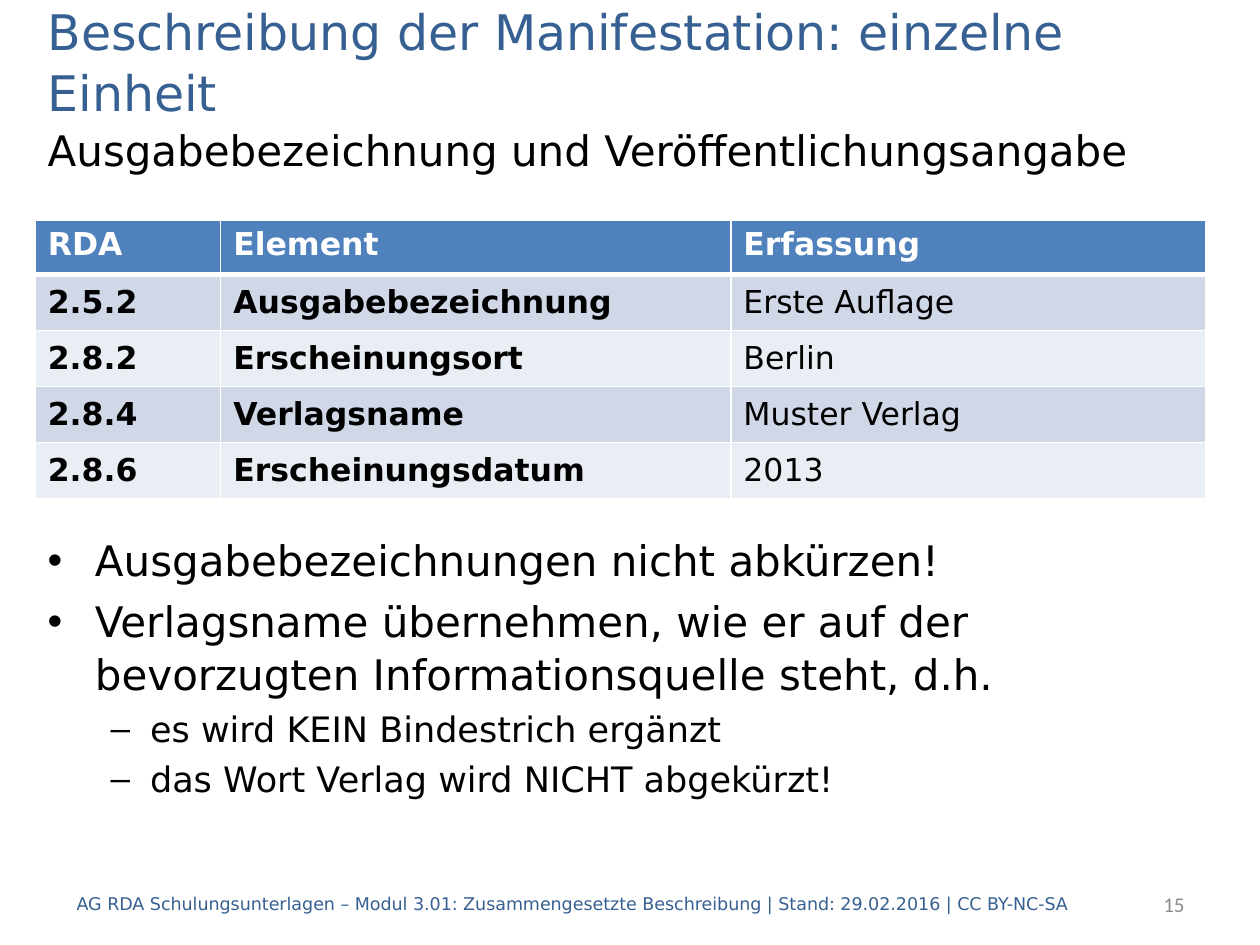
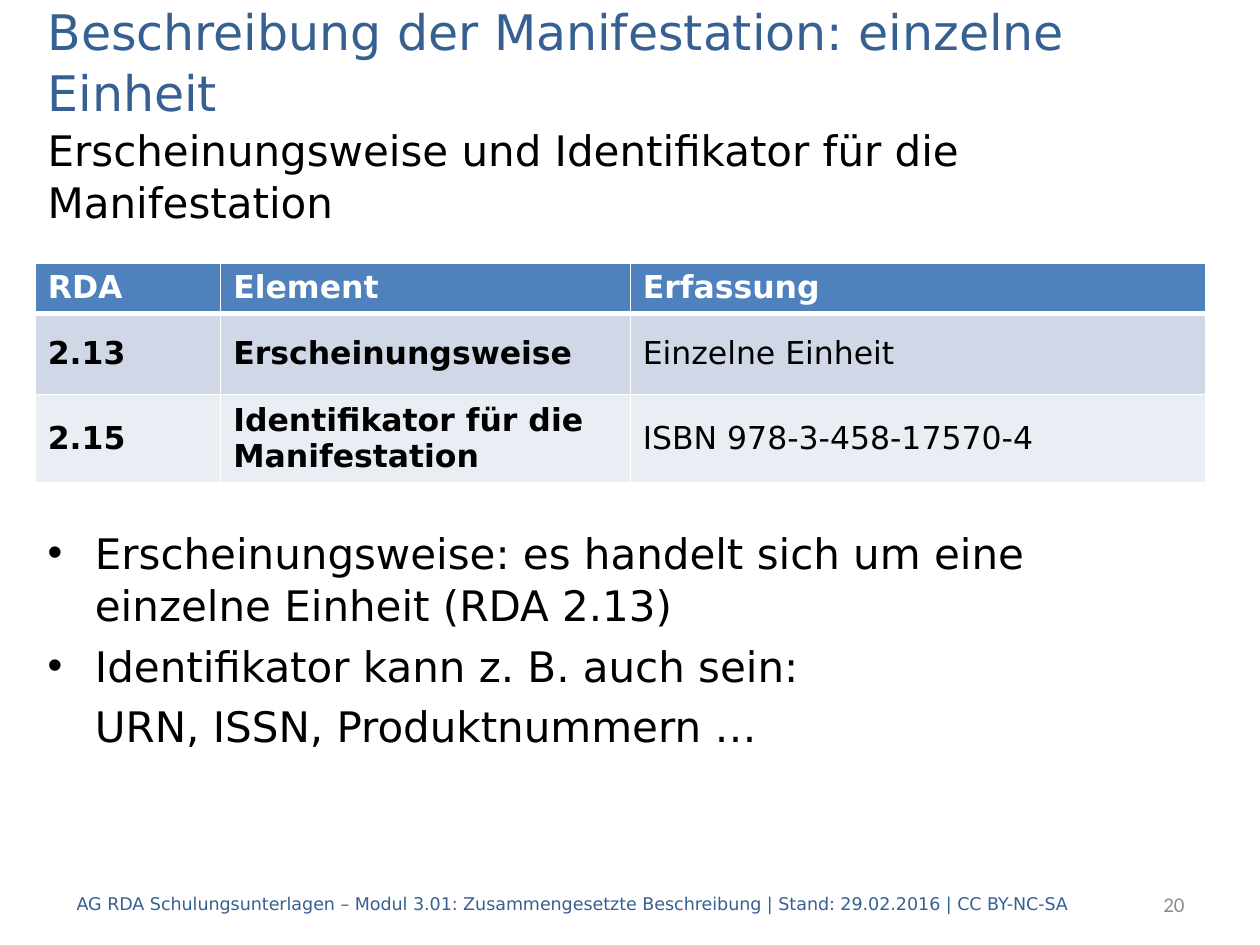
from lxml import etree
from pptx import Presentation
from pptx.dml.color import RGBColor
from pptx.enum.text import MSO_ANCHOR, PP_ALIGN
from pptx.oxml.ns import qn
from pptx.util import Pt

TOP, MIDDLE = MSO_ANCHOR.TOP, MSO_ANCHOR.MIDDLE
LEFT, RIGHT = PP_ALIGN.LEFT, PP_ALIGN.RIGHT

# Shared look
INK = {"blue": "376092", "black": "000000", "grey": "8C8C8C", "white": "FFFFFF",
       "head": "4F81BD", "odd": "D0D8E8", "even": "E9EDF4"}
FONT = "DejaVu Sans"
EDGE, WIDE = 20.16, 680.4
LEAD = 1.04  # line spacing of headings and lists
TITLE = "Beschreibung der Manifestation: einzelne Einheit"
FOOTER = ("AG RDA Schulungsunterlagen – Modul 3.01: Zusammengesetzte Beschreibung"
          " | Stand: 29.02.2016 | CC BY-NC-SA")
HEADS = ("RDA", "Element", "Erfassung")

# List levels: size, left margin, first-line indent, bullet
LEVELS = {"point": (24, 27, -27, "•"), "plain": (24, 27, 0, None),
          "dash": (20, 58.5, -22.5, "–")}

SLIDES = [
    {"number": "15",
     "lead": "Ausgabebezeichnung und Veröffentlichungsangabe",
     "top": 126, "cols": (106, 291.5, 271.5), "rows": (31, 32, 32, 32, 32),
     "cells": [("2.5.2", "Ausgabebezeichnung", "Erste Auflage"),
               ("2.8.2", "Erscheinungsort", "Berlin"),
               ("2.8.4", "Verlagsname", "Muster Verlag"),
               ("2.8.6", "Erscheinungsdatum", "2013")],
     "list_top": 301,
     "list": [("point", "Ausgabebezeichnungen nicht abkürzen!"),
              ("point", "Verlagsname übernehmen, wie er auf der bevorzugten "
                        "Informationsquelle steht, d.h."),
              ("dash", "es wird KEIN Bindestrich ergänzt"),
              ("dash", "das Wort Verlag wird NICHT abgekürzt!")]},
    {"number": "20",
     "lead": "Erscheinungsweise und Identifikator für die Manifestation",
     "top": 150.5, "cols": (106, 234, 329), "rows": (28, 46, 49),
     "cells": [("2.13", "Erscheinungsweise", "Einzelne Einheit"),
               ("2.15", "Identifikator für die Manifestation",
                "ISBN 978-3-458-17570-4")],
     "list_top": 296.5,
     "list": [("point", "Erscheinungsweise: es handelt sich um eine einzelne "
                        "Einheit (RDA 2.13)"),
              ("point", "Identifikator kann z. B. auch sein:"),
              ("plain", "URN, ISSN, Produktnummern …")]},
]


def add_run(para, text, size, ink, bold=False, font=FONT):
    run = para.add_run()
    run.text = text
    run.font.size = Pt(size)
    run.font.name = font
    run.font.bold = bold
    run.font.color.rgb = RGBColor.from_string(INK[ink])


def add_frame(slide, left, top, width, height, anchor):
    box = slide.shapes.add_textbox(Pt(left), Pt(top), Pt(width), Pt(height))
    frame = box.text_frame
    frame.word_wrap = True
    frame.vertical_anchor = anchor
    return frame


def add_label(slide, area, text, size, ink, anchor=MIDDLE, align=LEFT,
              font=FONT, lead=1.0):
    para = add_frame(slide, *area, anchor).paragraphs[0]
    para.alignment = align
    para.line_spacing = lead
    add_run(para, text, size, ink, font=font)


def add_list(slide, top, items):
    frame = add_frame(slide, EDGE, top, WIDE, 496 - top, TOP)
    for index, (level, text) in enumerate(items):
        para = frame.add_paragraph() if index else frame.paragraphs[0]
        size, margin, indent, mark = LEVELS[level]
        para.line_spacing = LEAD
        para.space_before = Pt(0.2 * size if index else 0)
        props = para._p.get_or_add_pPr()
        props.set("marL", str(Pt(margin)))
        props.set("indent", str(Pt(indent)))
        if mark:
            face = etree.SubElement(props, qn("a:buFont"))
            face.set("typeface", "Arial")
            etree.SubElement(props, qn("a:buChar")).set("char", mark)
        add_run(para, text, size, "black")


def add_border(cell, side, width):
    line = etree.SubElement(cell._tc.get_or_add_tcPr(), qn("a:ln" + side))
    line.set("w", str(Pt(width)))
    fill = etree.SubElement(line, qn("a:solidFill"))
    etree.SubElement(fill, qn("a:srgbClr")).set("val", INK["white"])


def fill_cell(cell, text, row, col):
    head = row == 0
    thick = {"T": 3 if row == 1 else 1, "B": 3 if head else 1}
    for side in "LRTB":
        add_border(cell, side, thick.get(side, 1))
    tone = "head" if head else "odd" if row % 2 else "even"
    cell.fill.solid()
    cell.fill.fore_color.rgb = RGBColor.from_string(INK[tone])
    cell.vertical_anchor = TOP if head else MIDDLE
    add_run(cell.text_frame.paragraphs[0], text, 18,
            "white" if head else "black", bold=head or col < 2)


def add_grid(slide, top, cols, rows, cells):
    grid = slide.shapes.add_table(len(rows), len(cols), Pt(EDGE), Pt(top),
                                  Pt(sum(cols)), Pt(sum(rows))).table
    for col, width in enumerate(cols):
        grid.columns[col].width = Pt(width)
    for row, (height, texts) in enumerate(zip(rows, [HEADS, *cells])):
        grid.rows[row].height = Pt(height)
        for col, text in enumerate(texts):
            fill_cell(grid.cell(row, col), text, row, col)


def add_page(deck, page):
    slide = deck.slides.add_slide(deck.slide_layouts[6])
    # Heading
    add_label(slide, (EDGE, 14.4, WIDE, 40.3), TITLE, 28, "blue", lead=LEAD)
    add_label(slide, (EDGE, 66.24, WIDE, 60), page["lead"], 24, "black",
              anchor=TOP, lead=LEAD)
    # Table and list
    add_grid(slide, page["top"], page["cols"], page["rows"], page["cells"])
    add_list(slide, page["list_top"], page["list"])
    # Footer
    add_label(slide, (569.5, 502, 114.5, 28.8), page["number"], 12, "grey",
              align=RIGHT, font="Calibri")
    add_label(slide, (36.7, 502, 629.3, 28.8), FOOTER, 10, "blue")


def main():
    deck = Presentation()
    deck.slide_width, deck.slide_height = Pt(720), Pt(540)
    for page in SLIDES:
        add_page(deck, page)
    deck.save("out.pptx")


if __name__ == "__main__":
    main()
